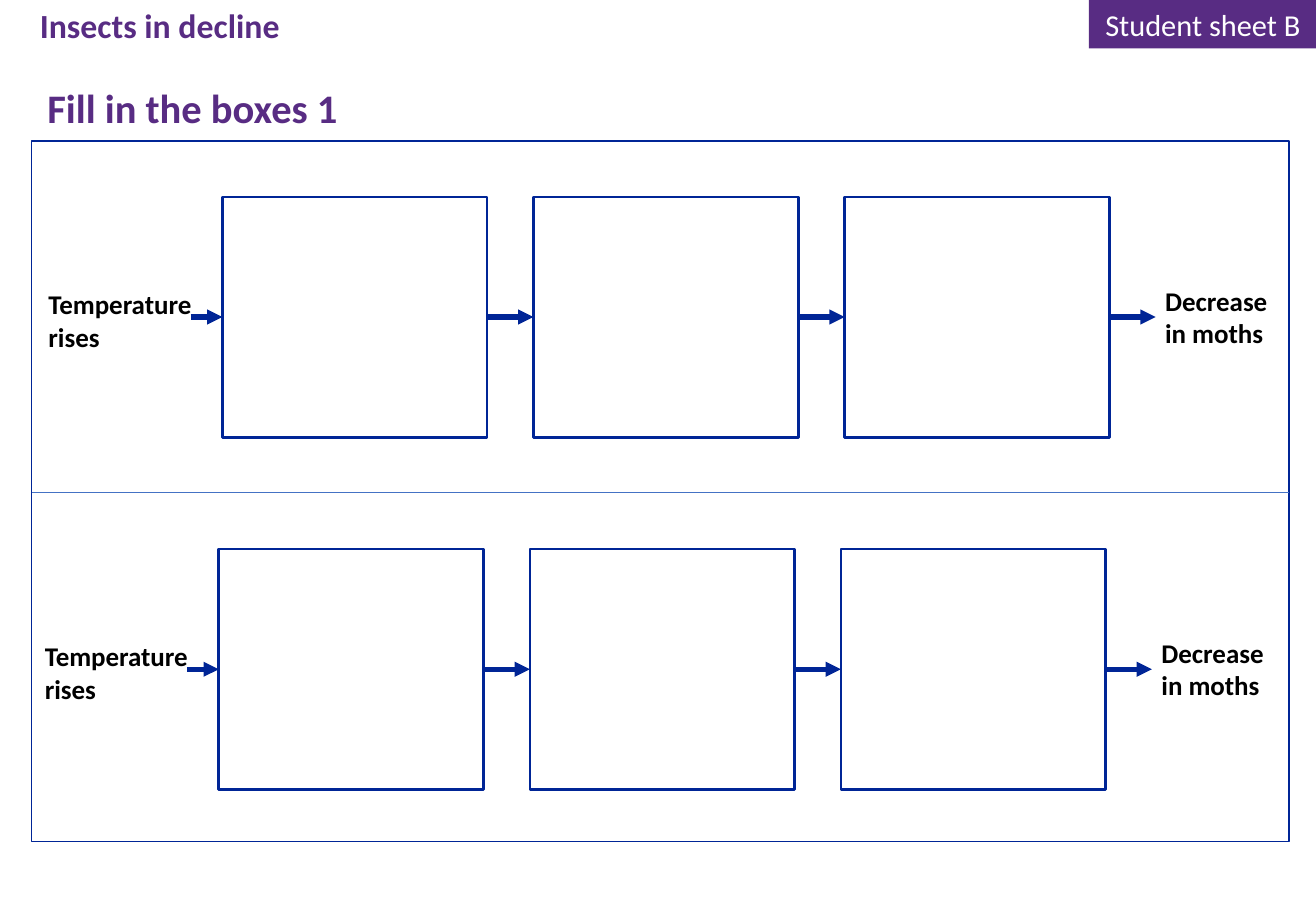
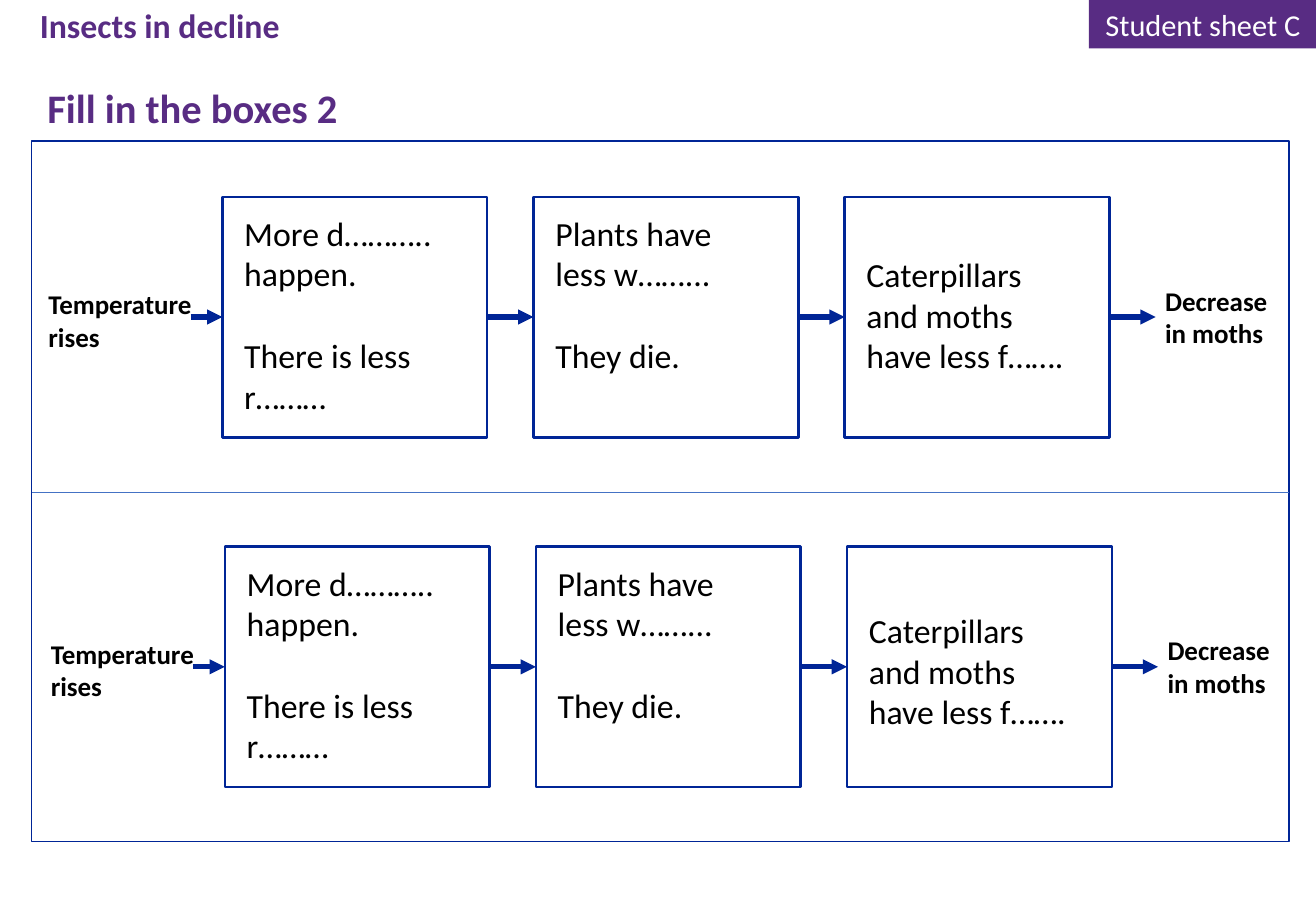
from dataclasses import dataclass

from lxml import etree
from pptx import Presentation
from pptx.dml.color import RGBColor
from pptx.enum import shapes, text
from pptx.oxml.ns import qn
from pptx.util import Inches, Pt


@dataclass(frozen=True)
class Theme:
    font: str = "Calibri"
    purple: str = "582C83"
    navy: str = "002596"
    blue: str = "4472C4"
    black: str = "000000"
    white: str = "FFFFFF"
    title: int = 24
    header: int = 20
    body: int = 20
    badge: int = 18
    label: int = 16


theme = Theme()
PARA_GAP = 24.4
BOX_W, BOX_H, BOX_GAP = 2.18, 1.98, 0.38
LEAD_IN = 0.26
FRAME = (0.26, 1.16, 10.35, 5.77)
DIVIDER_Y = 4.05

EMPTY = [[], [], []]
PROMPTS = [
    ["More d……….. happen.", "There is less r………"],
    ["Plants have less w……...", "They die."],
    ["Caterpillars and moths have less f……."],
]
# Each flow: left and top of its first box, top inset of the text in its last box
SHEETS = [
    ("B", "Fill in the boxes 1", EMPTY, [(1.83, 1.62, 0.47), (1.8, 4.52, 0.47)]),
    ("C", "Fill in the boxes 2", PROMPTS, [(1.83, 1.62, 0.47), (1.85, 4.5, 0.52)]),
]


def write(shape, lines, size, color, bold=False, align=text.PP_ALIGN.LEFT, **frame_format):
    """Fill a shape with one paragraph per line; frame_format overrides the frame defaults."""
    frame = shape.text_frame
    defaults = {"word_wrap": True, "auto_size": text.MSO_AUTO_SIZE.NONE,
                "vertical_anchor": text.MSO_ANCHOR.TOP}
    for name, value in (defaults | frame_format).items():
        setattr(frame, name, value)
    for index, line in enumerate(lines):
        para = frame.paragraphs[0] if index == 0 else frame.add_paragraph()
        para.alignment = align
        if index:
            para.space_before = Pt(PARA_GAP)
        span = para.add_run()
        span.text = line
        for name, value in {"name": theme.font, "size": Pt(size), "bold": bold}.items():
            setattr(span.font, name, value)
        span.font.color.rgb = RGBColor.from_string(color)


def draw_line(parent, start, end, color, width, arrow=False):
    line = parent.add_connector(shapes.MSO_CONNECTOR.STRAIGHT,
                                *(Inches(value) for value in (*start, *end)))
    line.line.color.rgb = RGBColor.from_string(color)
    line.line.width = Pt(width)
    if arrow:
        etree.SubElement(line.line._get_or_add_ln(), qn("a:tailEnd"), type="triangle")
    etree.SubElement(line._element.spPr, qn("a:effectLst"))
    return line


deck = Presentation()
deck.slide_width, deck.slide_height = Inches(10.83), Inches(7.5)
layout = deck.slide_layouts[5]
layout_title = layout.placeholders[0]
for side, value in {"left": 0.29, "top": 0.63, "width": 6.92, "height": 0.5}.items():
    setattr(layout_title, side, Inches(value))

for letter, title, prompts, flows in SHEETS:
    page = deck.slides.add_slide(layout)
    write(page.shapes.title, [title], theme.title, theme.purple, bold=True)

    badge = page.shapes.add_shape(shapes.MSO_SHAPE.RECTANGLE, Inches(8.96), 0,
                                  Inches(1.88), Inches(0.4))
    badge.shadow.inherit = False
    badge.fill.solid()
    badge.fill.fore_color.rgb = RGBColor.from_string(theme.purple)
    badge.line.fill.background()
    write(badge, [f"Student sheet {letter}"], theme.badge, theme.white,
          align=text.PP_ALIGN.CENTER)

    header = page.shapes.add_textbox(Inches(0.23), Inches(-0.01), Inches(6.92), Inches(0.44))
    write(header, ["Insects in decline"], theme.header, theme.purple, bold=True)

    left, top, width, height = FRAME
    frame_box = page.shapes.add_shape(shapes.MSO_SHAPE.RECTANGLE,
                                      *(Inches(value) for value in FRAME))
    frame_box.shadow.inherit = False
    frame_box.fill.background()
    frame_box.line.color.rgb = RGBColor.from_string(theme.navy)
    frame_box.line.width = Pt(1)
    draw_line(page.shapes, (left, DIVIDER_Y), (left + width, DIVIDER_Y), theme.blue, 0.5)

    for x, y, last_inset in flows:
        flow = page.shapes.add_group_shape().shapes
        for label, dx, dy, label_width in [("Temperature rises", -1.53, 0.7, 1.41),
                                           ("Decrease in moths", 7.66, 0.67, 1.15)]:
            box = flow.add_textbox(Inches(x + dx), Inches(y + dy),
                                   Inches(label_width), Inches(0.64))
            write(box, [label], theme.label, theme.black, bold=True)

        boxes = []
        for index, (lines, inset) in enumerate(zip(prompts, (0.13, 0.13, last_inset))):
            box = flow.add_shape(shapes.MSO_SHAPE.RECTANGLE,
                                 Inches(x + index * (BOX_W + BOX_GAP)), Inches(y),
                                 Inches(BOX_W), Inches(BOX_H))
            box.shadow.inherit = False
            box.fill.background()
            box.line.color.rgb = RGBColor.from_string(theme.navy)
            box.line.width = Pt(1.5)
            write(box, lines, theme.body, theme.black, margin_left=Inches(0.18),
                  margin_right=Inches(0.3), margin_top=Inches(inset))
            boxes.append(box)

        middle = y + BOX_H / 2
        for index in range(len(boxes) + 1):
            end = x + index * (BOX_W + BOX_GAP)
            start = end - (BOX_GAP if index else LEAD_IN)
            arrow = draw_line(flow, (start, middle), (end, middle), theme.navy, 3, arrow=True)
            if index:
                arrow.begin_connect(boxes[index - 1], 3)
            if index < len(boxes):
                arrow.end_connect(boxes[index], 1)

deck.save("out.pptx")
